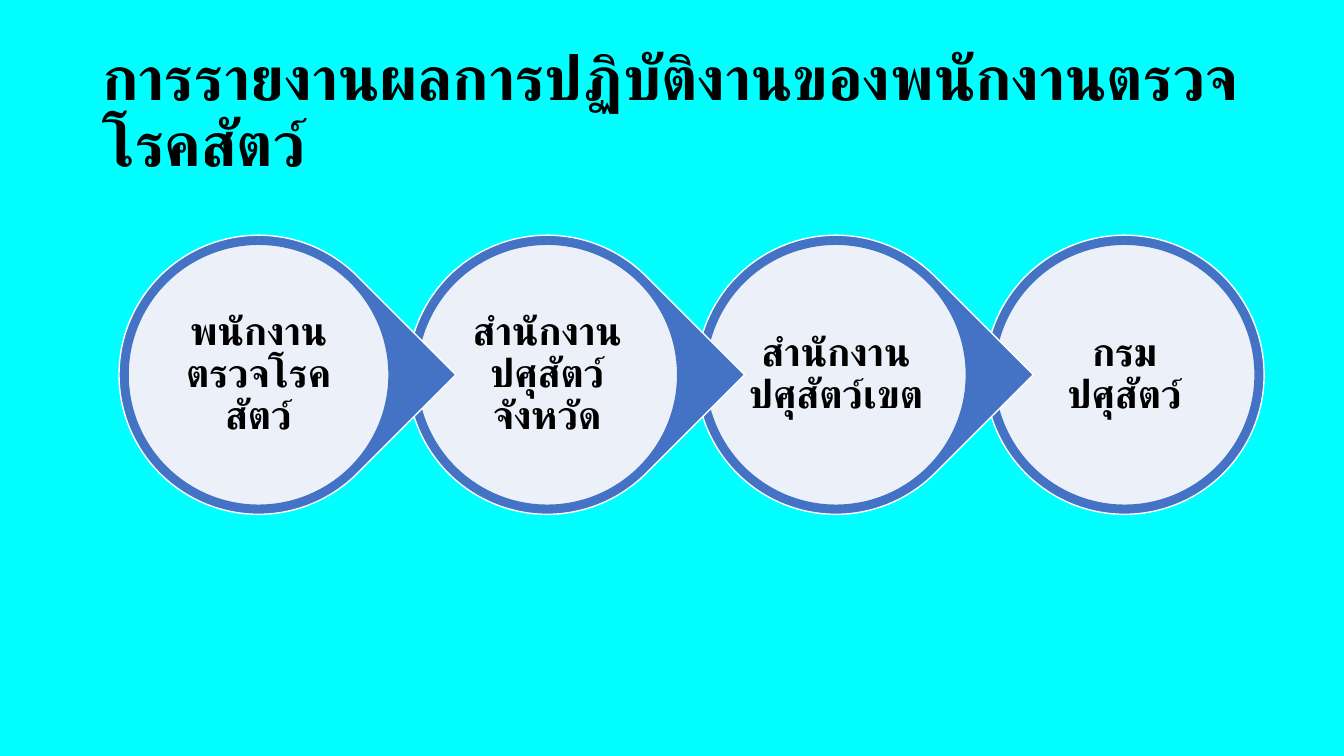
import dataclasses
import typing

import lxml.etree
import pptx
import pptx.dml.color
import pptx.enum.shapes
import pptx.enum.text
import pptx.oxml.ns
import pptx.util

Pt = pptx.util.Pt
SHAPE = pptx.enum.shapes.MSO_SHAPE
ALIGN = pptx.enum.text.PP_ALIGN
ANCHOR = pptx.enum.text.MSO_ANCHOR

COLORS = {"background": "00FFFF", "blue": "4472C4", "white": "FFFFFF", "text": "000000"}

# Geometry in points
CHAIN_LEFT, CHAIN_TOP, PITCH = 85, 168, 206.2
OUTER, INNER, LABEL = 199.4, 186.4, 133.2
INSET = 2.88


@dataclasses.dataclass(frozen=True)
class Office:
    label: str
    outline: SHAPE = SHAPE.TEAR
    rotation: float = 45


OFFICES = [
    Office("พนักงานตรวจโรคสัตว์"),
    Office("สำนักงาน\nปศุสัตว์จังหวัด"),
    Office("สำนักงาน\nปศุสัตว์เขต"),
    Office("กรมปศุสัตว์", SHAPE.OVAL, 0),
]


def rgb(name: str) -> pptx.dml.color.RGBColor:
    return pptx.dml.color.RGBColor.from_string(COLORS[name])


def set_attrs(obj: typing.Any, values: dict[str, typing.Any]) -> None:
    for name, value in values.items():
        setattr(obj, name, value)


def write(tf: typing.Any, text: str, size: float, frame: dict, paragraph: dict) -> None:
    set_attrs(tf, {"word_wrap": True, "vertical_anchor": ANCHOR.MIDDLE, **frame})
    p = tf.paragraphs[0]
    p.text = text
    set_attrs(p, {"line_spacing": 0.9, **paragraph})
    for r in p.runs:
        set_attrs(r.font, {"name": "Calibri", "size": Pt(size), "bold": True})
        r.font.color.rgb = rgb("text")


def square(center_x: float, side: float) -> tuple:
    """Box of the given side, centred on the chain's axis."""
    top = CHAIN_TOP + (OUTER - side) / 2
    return Pt(center_x - side / 2), Pt(top), Pt(side), Pt(side)


def add_disc(shapes: typing.Any, kind: SHAPE, box: tuple, fill: str, line: str) -> typing.Any:
    sp = shapes.add_shape(kind, *box)
    sp.shadow.inherit = False
    sp.fill.solid()
    sp.fill.fore_color.rgb = rgb(fill)
    sp.line.color.rgb = rgb(line)
    sp.line.width = Pt(1)
    return sp


def set_opacity(sp: typing.Any, percent: int) -> None:
    qn = pptx.oxml.ns.qn
    color = sp.fill._xPr.find(qn("a:solidFill")).find(qn("a:srgbClr"))
    lxml.etree.SubElement(color, qn("a:alpha"), val=str(percent * 1000))


def add_office(shapes: typing.Any, office: Office, center_x: float) -> None:
    outer = add_disc(shapes, office.outline, square(center_x, OUTER), "blue", "white")
    outer.rotation = office.rotation
    inner = add_disc(shapes, SHAPE.OVAL, square(center_x, INNER), "white", "blue")
    set_opacity(inner, 90)
    label = shapes.add_textbox(*square(center_x, LABEL))
    margins = {f"margin_{side}": Pt(INSET) for side in ("left", "top", "right", "bottom")}
    write(label.text_frame, office.label, 28, margins,
          {"alignment": ALIGN.CENTER, "space_after": Pt(9.8)})


def main() -> None:
    prs = pptx.Presentation()
    set_attrs(prs, {"slide_width": Pt(960), "slide_height": Pt(540)})
    s = prs.slides.add_slide(prs.slide_layouts[5])
    s.background.fill.solid()
    s.background.fill.fore_color.rgb = rgb("background")

    # Title
    title = s.shapes.title
    set_attrs(title, {"left": Pt(66), "top": Pt(28.8), "width": Pt(828), "height": Pt(104.4)})
    write(title.text_frame, "การรายงานผลการปฏิบัติงานของพนักงานตรวจโรคสัตว์", 44,
          {"auto_size": pptx.enum.text.MSO_AUTO_SIZE.NONE}, {"alignment": ALIGN.LEFT})

    # Reporting chain, drawn from the right so each tip overlaps the next disc
    chain = s.shapes.add_group_shape()
    for i, office in reversed(list(enumerate(OFFICES))):
        add_office(chain.shapes, office, CHAIN_LEFT + OUTER / 2 + i * PITCH)

    prs.save("out.pptx")


if __name__ == "__main__":
    main()
